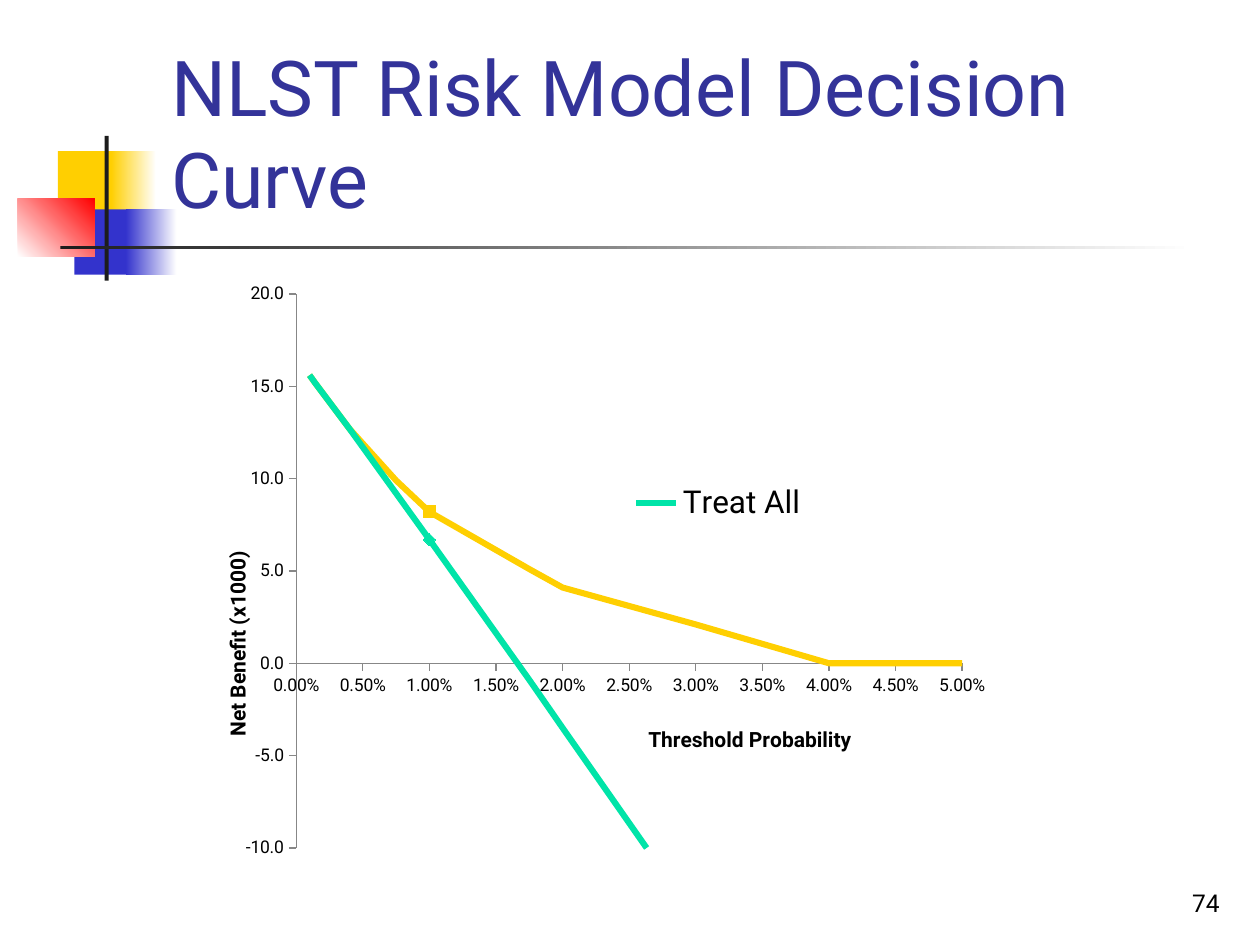
from lxml import etree
from pptx import Presentation
from pptx.chart.data import XyChartData
from pptx.dml.color import RGBColor
from pptx.enum.chart import XL_CHART_TYPE, XL_LEGEND_POSITION, XL_MARKER_STYLE, XL_TICK_MARK
from pptx.enum.shapes import MSO_SHAPE
from pptx.enum.text import MSO_ANCHOR, MSO_AUTO_SIZE, PP_ALIGN
from pptx.oxml.ns import qn
from pptx.util import Cm, Pt

RECT = MSO_SHAPE.RECTANGLE
SCATTER = XL_CHART_TYPE.XY_SCATTER_LINES_NO_MARKERS
LEGEND_RIGHT = XL_LEGEND_POSITION.RIGHT
SQUARE, DIAMOND = XL_MARKER_STYLE.SQUARE, XL_MARKER_STYLE.DIAMOND
TICK_OUT, TICK_NONE = XL_TICK_MARK.OUTSIDE, XL_TICK_MARK.NONE
BOTTOM = MSO_ANCHOR.BOTTOM
NO_FIT = MSO_AUTO_SIZE.NONE
LEFT, RIGHT = PP_ALIGN.LEFT, PP_ALIGN.RIGHT

FONT = "Roboto"
YELLOW, BLUE, RED, GREEN = "FFCF01", "3333CC", "FF0000", "00E4A8"
WHITE, BLACK, DARK, GREY, NAVY = "FFFFFF", "000000", "1C1C1C", "878787", "333399"

DECORATION = [
    (1.17, 3.05, 1.22, 1.32, [YELLOW], 0),
    (2.24, 3.05, 0.91, 1.32, [YELLOW, WHITE], 0),
    (1.5, 4.22, 1.17, 1.32, [BLUE], 0),
    (2.54, 4.22, 1.02, 1.32, [BLUE, WHITE], 0),
    (0.36, 4.01, 1.55, 1.17, [WHITE, RED], 45),
    (2.11, 2.74, 0.08, 2.92, [DARK], 0),
    (1.22, 4.95, 22.86, 0.08, [DARK, WHITE], 0),
]
THRESHOLDS = [0.001, 0.0014, 0.004, 0.0075, 0.01, 0.0175, 0.02, 0.03, 0.04, 0.05]
MARKED_POINT = THRESHOLDS.index(0.01)
SERIES = [
    ("Treat All", GREEN, DIAMOND,
     [15.6, 15.2, 12.7, 9.2, 6.7, -0.9, -3.5, -13.8, -24.4, -35.1]),
    ("Risk Model", YELLOW, SQUARE,
     [15.6, 15.2, 12.7, 9.9, 8.2, 5.1, 4.1, 2.1, 0, 0]),
]


def rgb(value):
    """Turn a hex string into a colour."""
    return RGBColor.from_string(value)


def style_font(font, size, color=BLACK, bold=False):
    """Set the typeface, size, colour and weight of a font."""
    font.name, font.size, font.bold = FONT, Pt(size), bold
    font.color.rgb = rgb(color)


def add_block(slide, left, top, width, height, colors, angle):
    """Add a borderless rectangle with a plain or a gradient fill."""
    sp = slide.shapes.add_shape(RECT, Cm(left), Cm(top), Cm(width), Cm(height))
    sp.shadow.inherit = False
    sp.line.fill.background()
    if len(colors) == 1:
        sp.fill.solid()
        sp.fill.fore_color.rgb = rgb(colors[0])
        return
    sp.fill.gradient()
    sp.fill.gradient_angle = angle
    for position, (stop, color) in enumerate(zip(sp.fill.gradient_stops, colors)):
        stop.position = position
        stop.color.rgb = rgb(color)


def write_text(sp, box, text, size, color, align):
    """Place a text shape and write one bottom-anchored run in it."""
    sp.left, sp.top, sp.width, sp.height = [Cm(n) for n in box]
    tf = sp.text_frame
    tf.word_wrap, tf.auto_size, tf.vertical_anchor = True, NO_FIT, BOTTOM
    p = tf.paragraphs[0]
    p.alignment = align
    r = p.add_run()
    r.text = text
    style_font(r.font, size, color)


def set_layout(parent, **values):
    """Give a chart part a manual layout."""
    for old in parent.findall(qn("c:layout")):
        parent.remove(old)
    layout = etree.Element(qn("c:layout"))
    manual = etree.SubElement(layout, qn("c:manualLayout"))
    for tag, value in values.items():
        etree.SubElement(manual, qn("c:" + tag)).set("val", str(value))
    overlay = parent.find(qn("c:overlay"))
    parent.insert(0 if overlay is None else parent.index(overlay), layout)


def format_axis(axis, title, low, high, step, number_format, x, y, rotation):
    """Set the scale, line, labels and title of an axis."""
    axis.minimum_scale, axis.maximum_scale, axis.major_unit = low, high, step
    axis.has_major_gridlines = False
    axis.major_tick_mark, axis.minor_tick_mark = TICK_OUT, TICK_NONE
    axis.format.line.color.rgb = rgb(GREY)
    axis.format.line.width = Pt(0.75)
    labels = axis.tick_labels
    labels.number_format, labels.number_format_is_linked = number_format, False
    style_font(labels.font, 10)
    tf = axis.axis_title.text_frame
    tf._txBody.bodyPr.set("rot", str(rotation * 60000))
    r = tf.paragraphs[0].add_run()
    r.text = title
    style_font(r.font, 12, bold=True)
    set_layout(axis.axis_title._element, xMode="edge", yMode="edge", x=x, y=y)


def format_series(series, color, marker_style):
    """Colour a series and mark its point at the one percent threshold."""
    series.smooth = False
    point = series.points[MARKED_POINT]
    for item in (series, point):
        item.format.line.color.rgb = rgb(color)
        item.format.line.width = Pt(3.5)
    marker = point.marker
    marker.style, marker.size = marker_style, 7
    marker.format.fill.solid()
    marker.format.fill.fore_color.rgb = rgb(color)
    marker.format.line.color.rgb = rgb(color)


def format_legend(chart):
    """Show only the first series in the legend."""
    chart.has_legend = True
    legend = chart.legend
    legend.position, legend.include_in_layout = LEGEND_RIGHT, False
    style_font(legend.font, 18)
    entry = etree.Element(qn("c:legendEntry"))
    etree.SubElement(entry, qn("c:idx")).set("val", "1")
    etree.SubElement(entry, qn("c:delete")).set("val", "1")
    legend._element.find(qn("c:legendPos")).addnext(entry)
    set_layout(legend._element, xMode="edge", yMode="edge",
               x=0.45, y=0.33, w=0.2, h=0.07)


def add_decision_curve(slide):
    """Add the scatter chart of net benefit by threshold."""
    data = XyChartData()
    for name, _, _, benefits in SERIES:
        series = data.add_series(name)
        for point in zip(THRESHOLDS, benefits):
            series.add_data_point(*point)
    chart = slide.shapes.add_chart(
        SCATTER, Cm(4.24), Cm(5.72), Cm(18.62), Cm(12.09), data).chart
    chart.has_title = False
    style_font(chart.font, 10)
    plot = chart.plots[0]
    plot.vary_by_categories = False
    for series, (_, color, marker_style, _) in zip(plot.series, SERIES):
        format_series(series, color, marker_style)
    format_axis(chart.category_axis, "Threshold Probability",
                0, 0.05, 0.005, "0.00%", 0.47, 0.73, 0)
    format_axis(chart.value_axis, "Net Benefit (x1000)",
                -10, 20, 5, "0.0", 0.01, 0.44, -90)
    format_legend(chart)
    set_layout(chart._chartSpace.chart.plotArea, layoutTarget="inner",
               xMode="edge", yMode="edge", x=0.093, y=0.017, w=0.721, h=0.924)


def main():
    """Build the slide and save it."""
    prs = Presentation()
    prs.slide_width, prs.slide_height = Cm(25.4), Cm(19.05)
    s = prs.slides.add_slide(prs.slide_layouts[5])
    for block in DECORATION:
        add_block(s, *block)
    write_text(s.shapes.title, (3.2, 0.58, 21.64, 4.06),
               "NLST Risk Model Decision Curve", 44, NAVY, LEFT)
    number = s.shapes.add_textbox(0, 0, 0, 0)
    write_text(number, (19.56, 17.35, 5.28, 1.27), "74", 14, BLACK, RIGHT)
    add_decision_curve(s)
    prs.save("out.pptx")


if __name__ == "__main__":
    main()
